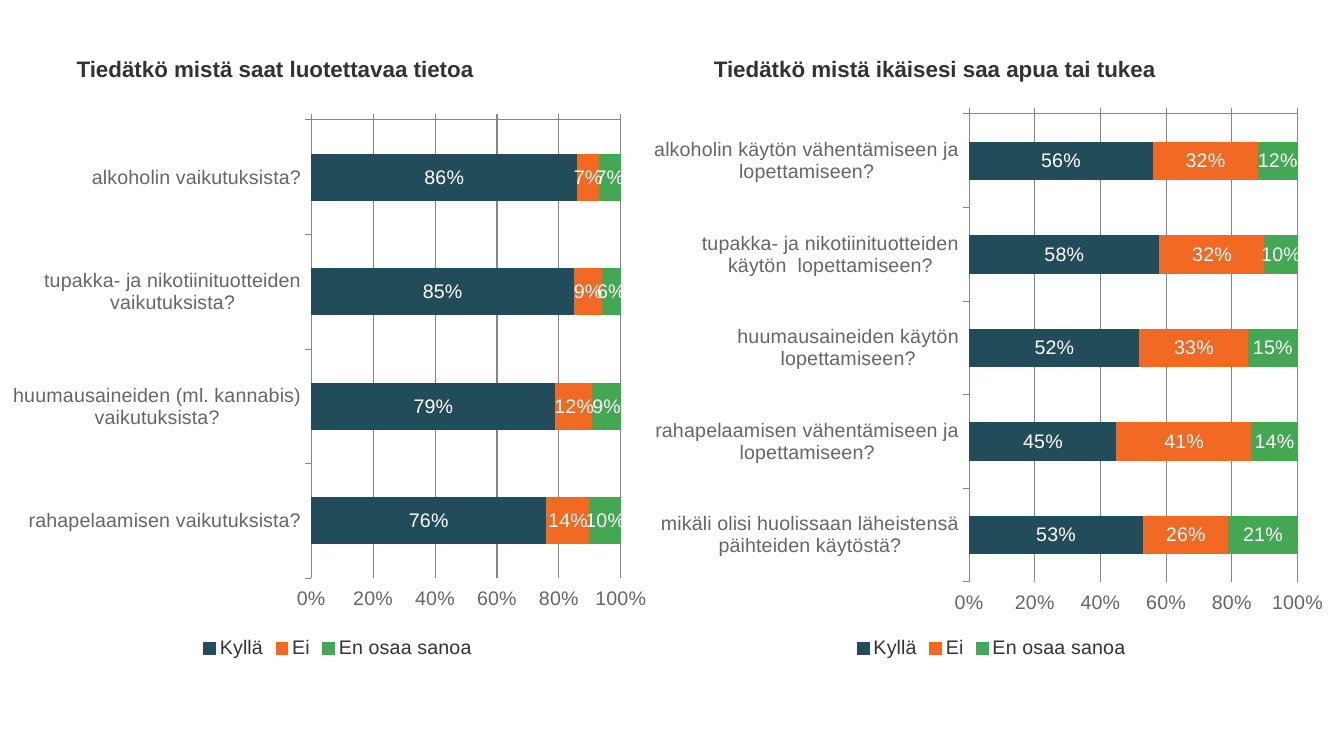
"""Builds a slide with two stacked bar charts on knowing where to find information and help."""
from lxml import etree
from pptx import Presentation
from pptx.chart.data import CategoryChartData
from pptx.dml.color import RGBColor
from pptx.enum.chart import XL_CHART_TYPE, XL_LABEL_POSITION, XL_LEGEND_POSITION, XL_TICK_LABEL_POSITION, XL_TICK_MARK
from pptx.oxml.ns import qn
from pptx.util import Inches, Pt

BAR_STACKED = XL_CHART_TYPE.BAR_STACKED
LABEL_CENTER = XL_LABEL_POSITION.CENTER
LEGEND_BOTTOM = XL_LEGEND_POSITION.BOTTOM
LABELS_LOW = XL_TICK_LABEL_POSITION.LOW
LABELS_HIGH = XL_TICK_LABEL_POSITION.HIGH
TICK_OUT = XL_TICK_MARK.OUTSIDE
TICK_NONE = XL_TICK_MARK.NONE

ANSWER_COLORS = {"Kyllä": "234C5A", "Ei": "F26923", "En osaa sanoa": "44A753"}
GRAY = "666666"
DARK = "333333"
GRID = "868686"

QUESTIONS = [
    {
        "title": "Tiedätkö mistä saat luotettavaa tietoa",
        "title_box": (0.76, 0.55, 4.13, 0.27),
        "chart_box": (0.13, 1.03, 6.44, 5.55),
        "plot": (0.459, 0.029, 0.477, 0.819),
        "answers": {
            "alkoholin vaikutuksista?": (0.86, 0.07, 0.07),
            "tupakka- ja nikotiinituotteiden vaikutuksista?": (0.85, 0.09, 0.06),
            "huumausaineiden (ml. kannabis) vaikutuksista?": (0.79, 0.12, 0.09),
            "rahapelaamisen vaikutuksista?": (0.76, 0.14, 0.10),
        },
    },
    {
        "title": "Tiedätkö mistä ikäisesi saa apua tai tukea",
        "title_box": (7.08, 0.55, 4.89, 0.27),
        "chart_box": (6.47, 0.98, 6.73, 5.6),
        "plot": (0.467, 0.027, 0.484, 0.829),
        "answers": {
            "alkoholin käytön vähentämiseen ja lopettamiseen?": (0.56, 0.32, 0.12),
            "tupakka- ja nikotiinituotteiden käytön  lopettamiseen?": (0.58, 0.32, 0.10),
            "huumausaineiden käytön lopettamiseen?": (0.52, 0.33, 0.15),
            "rahapelaamisen vähentämiseen ja lopettamiseen?": (0.45, 0.41, 0.14),
            "mikäli olisi huolissaan läheistensä päihteiden käytöstä?": (0.53, 0.26, 0.21),
        },
    },
]


def rgb(color):
    return RGBColor.from_string(color)


def add_text(slide, text, box, size=16, color=DARK, bold=False, font="Arial"):
    frame = slide.shapes.add_textbox(*map(Inches, box)).text_frame
    frame.margin_left = frame.margin_right = frame.margin_top = frame.margin_bottom = 0
    frame.word_wrap = True
    run = frame.paragraphs[0].add_run()
    run.text = text
    run.font.name, run.font.size, run.font.bold = font, Pt(size), bold
    run.font.color.rgb = rgb(color)


prs = Presentation()
prs.slide_width, prs.slide_height = Inches(13.33), Inches(7.5)
slide = prs.slides.add_slide(prs.slide_layouts[6])

for question in QUESTIONS:
    add_text(slide, question["title"], question["title_box"], bold=True)

    answers = question["answers"]
    data = CategoryChartData(number_format="0%")
    data.categories = list(answers)
    for answer, shares in zip(ANSWER_COLORS, zip(*answers.values())):
        data.add_series(answer, shares)
    chart = slide.shapes.add_chart(BAR_STACKED, *map(Inches, question["chart_box"]), data).chart
    chart.has_title = False
    chart.font.name, chart.font.size = "Calibri", Pt(14)

    chart.has_legend = True
    chart.legend.position = LEGEND_BOTTOM
    chart.legend.include_in_layout = False

    topics, percent = chart.category_axis, chart.value_axis
    topics.reverse_order = True
    topics.tick_label_position = LABELS_LOW
    percent.tick_label_position = LABELS_HIGH
    percent.minimum_scale, percent.maximum_scale, percent.major_unit = 0, 1, 0.2
    percent.tick_labels.number_format = "0%"
    percent.tick_labels.number_format_is_linked = False
    percent.has_major_gridlines = True
    for axis in (topics, percent):
        axis.major_tick_mark, axis.minor_tick_mark = TICK_OUT, TICK_NONE
    for line in (topics.format.line, percent.format.line, percent.major_gridlines.format.line):
        line.color.rgb, line.width = rgb(GRID), Pt(0.75)

    bars = chart.plots[0]
    bars.gap_width, bars.overlap, bars.vary_by_categories = 150, 100, False
    bars.has_data_labels = True
    labels = bars.data_labels
    labels.show_value = True
    labels.position = LABEL_CENTER
    labels.number_format, labels.number_format_is_linked = "0%", False

    fonts = ((topics.tick_labels.font, GRAY), (percent.tick_labels.font, GRAY),
             (chart.legend.font, DARK), (labels.font, "FFFFFF"))
    for font, color in fonts:
        font.name, font.size = "Arial", Pt(14)
        font.color.rgb = rgb(color)

    for series, color in zip(bars.series, ANSWER_COLORS.values()):
        series.format.fill.solid()
        series.format.fill.fore_color.rgb = rgb(color)
        series.format.line.color.rgb = rgb(color)
        series.format.line.width = Pt(0.75)

    plot_area = chart.plots[0]._element.getparent()
    for old_layout in plot_area.findall(qn("c:layout")):
        plot_area.remove(old_layout)
    layout = etree.Element(qn("c:layout"))
    plot_area.insert(0, layout)
    manual = etree.SubElement(layout, qn("c:manualLayout"))
    settings = zip(("layoutTarget", "xMode", "yMode", "x", "y", "w", "h"),
                   ("inner", "edge", "edge", *question["plot"]))
    for setting, value in settings:
        etree.SubElement(manual, qn(f"c:{setting}")).set("val", str(value))

prs.save("out.pptx")
